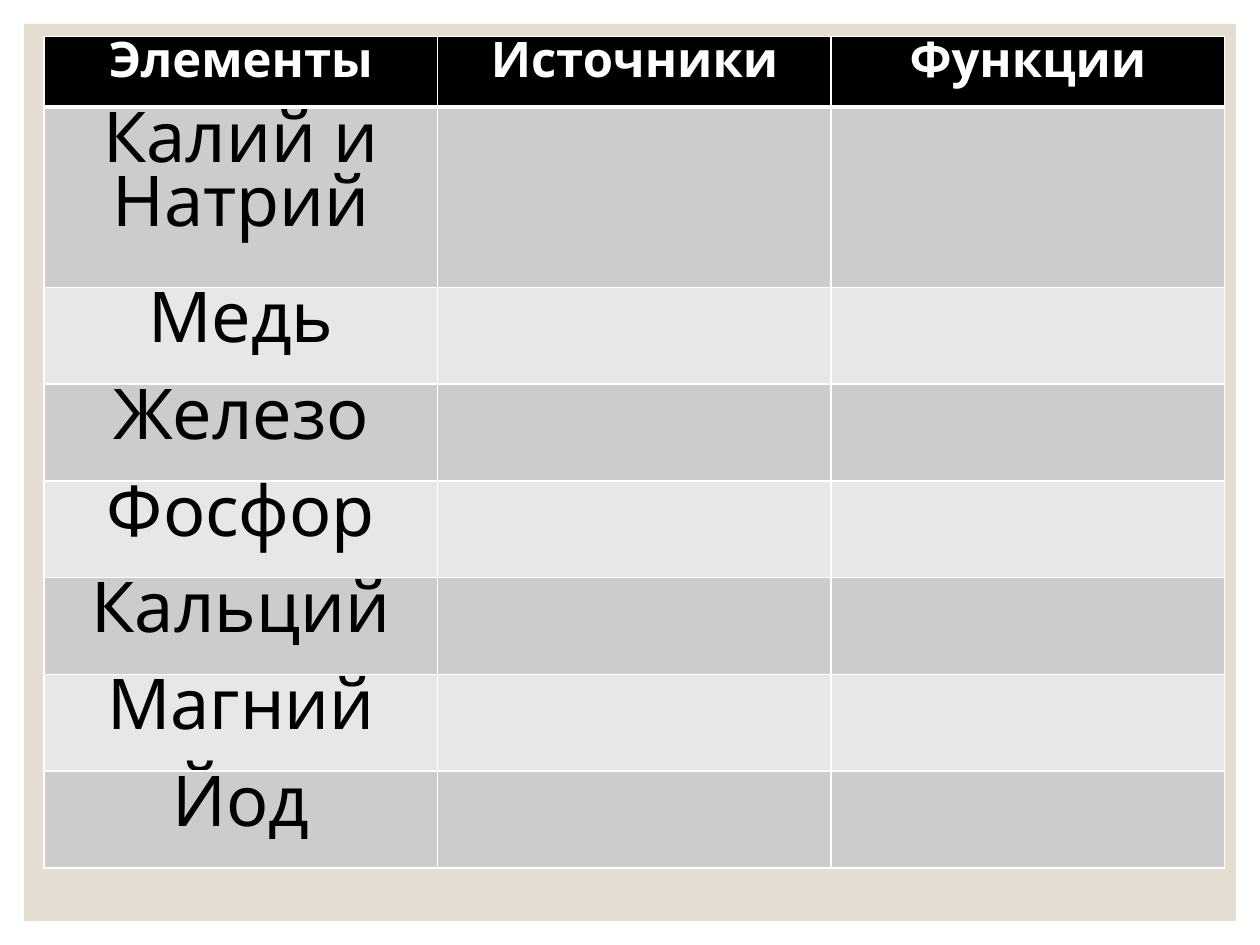
from lxml.etree import SubElement
from pptx import Presentation
from pptx.dml.color import RGBColor
from pptx.enum.shapes import MSO_SHAPE
from pptx.enum.text import PP_ALIGN
from pptx.oxml.ns import qn
from pptx.util import Inches, Pt

BLACK = RGBColor(0, 0, 0)
WHITE = RGBColor(0xFF, 0xFF, 0xFF)
BEIGE = RGBColor(0xE3, 0xDE, 0xD1)
DARK = RGBColor(0xCC, 0xCC, 0xCC)
LIGHT = RGBColor(0xE7, 0xE7, 0xE7)
FONT = "League Spartan"
HEADS = ["Элементы", "Источники", "Функции"]
NAMES = ["Калий и Натрий", "Медь", "Железо", "Фосфор", "Кальций", "Магний", "Йод"]


def add_panel(slide, left, top, width, height):
    panel = slide.shapes.add_shape(
        MSO_SHAPE.RECTANGLE, Inches(left), Inches(top), Inches(width), Inches(height))
    panel.shadow.inherit = False
    panel.fill.solid()
    panel.fill.fore_color.rgb = BEIGE
    panel.line.fill.background()


def add_edges(cell, widths):
    props = cell._tc.get_or_add_tcPr()
    for spot, (side, width) in enumerate(widths.items()):
        edge = SubElement(props, qn(f"a:{side}"), w=str(Pt(width)))
        fill = SubElement(edge, qn("a:solidFill"))
        SubElement(fill, qn("a:srgbClr"), val=str(WHITE))
        props.remove(edge)
        props.insert(spot, edge)


def fill_cell(cell, text, size, ink, back, bold, top, base):
    cell.fill.solid()
    cell.fill.fore_color.rgb = back
    add_edges(cell, {"lnL": 1, "lnR": 1, "lnT": top, "lnB": base})
    para = cell.text_frame.paragraphs[0]
    para.alignment = PP_ALIGN.CENTER
    if text:
        run = para.add_run()
        run.text = text
        font = run.font
        font.name, font.size, font.bold = FONT, Pt(size), bold
        font.color.rgb = ink


def add_grid(slide, left, top, width, height):
    rows = [HEADS] + [[name, "", ""] for name in NAMES]
    frame = slide.shapes.add_table(
        len(rows), len(HEADS), Inches(left), Inches(top), Inches(width), Inches(height))
    table = frame.table
    for col in table.columns:
        col.width = Inches(width / len(HEADS))
    first, second = 0.56, 1.43
    rest = (height - first - second) / (len(rows) - 2)
    sizes = [first, second] + [rest] * (len(rows) - 2)
    for r, (row, size) in enumerate(zip(rows, sizes)):
        table.rows[r].height = Inches(size)
        for c, text in enumerate(row):
            cell = table.cell(r, c)
            if r == 0:
                fill_cell(cell, text, 28, WHITE, BLACK, True, 1, 3)
            else:
                back = DARK if r % 2 else LIGHT
                fill_cell(cell, text, 40, BLACK, back, False, 3 if r == 1 else 1, 1)


def main():
    deck = Presentation()
    deck.slide_width, deck.slide_height = Inches(10), Inches(7.5)
    slide = deck.slides.add_slide(deck.slide_layouts[6])
    slide.background.fill.solid()
    slide.background.fill.fore_color.rgb = WHITE
    add_panel(slide, 0.19, 0.19, 9.62, 7.12)
    add_grid(slide, 0.35, 0.29, 9.37, 6.6)
    deck.save("out.pptx")


if __name__ == "__main__":
    main()
